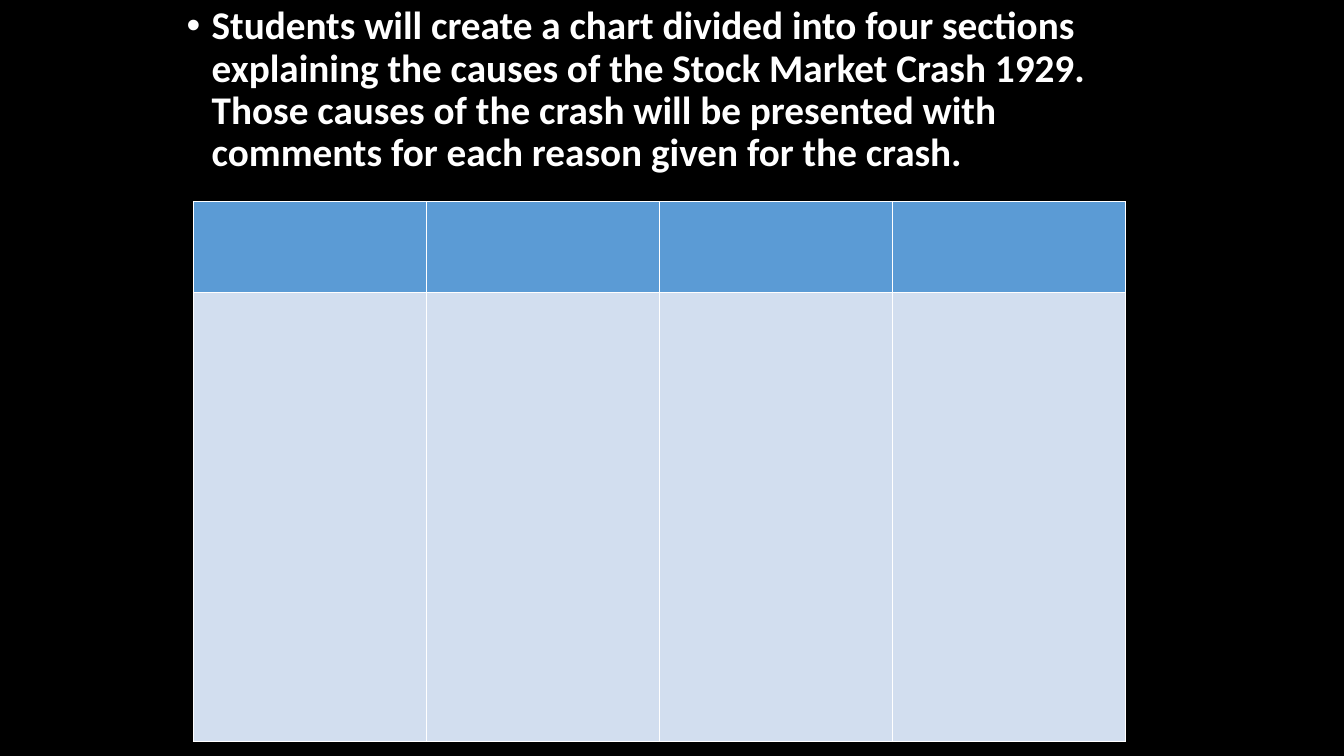
from lxml import etree
from pptx import Presentation
from pptx.dml.color import RGBColor
from pptx.enum.text import MSO_ANCHOR, MSO_AUTO_SIZE, PP_ALIGN
from pptx.oxml.ns import qn
from pptx.util import Inches, Pt

TOP, LEFT = MSO_ANCHOR.TOP, PP_ALIGN.LEFT
NO_AUTOFIT = MSO_AUTO_SIZE.NONE
TITLE_AND_CONTENT = 1

BLACK, WHITE = "000000", "FFFFFF"
HEADER_BLUE, BODY_BLUE = "5B9BD5", "D2DEEF"
COLUMN_COUNT, COLUMN_WIDTH = 4, 2.31
ROWS = [(0.9, HEADER_BLUE), (4.46, BODY_BLUE)]

ASSIGNMENT = (
    "Students will create a chart divided into four sections explaining "
    "the causes of the Stock Market Crash 1929. Those causes of the crash "
    "will be presented with comments for each reason given for the crash."
)


def set_fill(fill, color):
    fill.solid()
    fill.fore_color.rgb = RGBColor.from_string(color)


def set_borders(cell, color, width):
    properties = cell._tc.get_or_add_tcPr()
    # Border lines come before the fill in the cell properties
    for position, side in enumerate(("a:lnL", "a:lnR", "a:lnT", "a:lnB")):
        border = etree.Element(qn(side), w=str(Pt(width)))
        fill = etree.SubElement(border, qn("a:solidFill"))
        etree.SubElement(fill, qn("a:srgbClr"), val=color)
        properties.insert(position, border)


def add_assignment(slide):
    body = slide.placeholders[1]
    body.left, body.top = Inches(1.75), Inches(0.01)
    body.width, body.height = Inches(9.83), Inches(4.78)
    frame = body.text_frame
    frame.text = ASSIGNMENT
    frame.word_wrap = True
    frame.auto_size = NO_AUTOFIT
    frame.vertical_anchor = TOP

    paragraph = frame.paragraphs[0]
    paragraph.alignment = LEFT
    paragraph.line_spacing = 0.9
    paragraph.space_before = Pt(10)
    font = paragraph.runs[0].font
    font.name, font.size, font.bold = "Calibri", Pt(28), True
    font.color.rgb = RGBColor.from_string(WHITE)

    # Hanging bullet
    properties = paragraph._p.get_or_add_pPr()
    properties.set("marL", str(Inches(0.25)))
    properties.set("indent", str(Inches(-0.25)))
    etree.SubElement(properties, qn("a:buFont"), typeface="Arial")
    etree.SubElement(properties, qn("a:buChar"), char="•")


def add_causes_chart(slide):
    height = sum(row_height for row_height, _ in ROWS)
    causes = slide.shapes.add_table(
        len(ROWS), COLUMN_COUNT, Inches(1.92), Inches(2),
        Inches(COLUMN_COUNT * COLUMN_WIDTH), Inches(height),
    ).table
    for column in causes.columns:
        column.width = Inches(COLUMN_WIDTH)
    for row, (row_height, color) in zip(causes.rows, ROWS):
        row.height = Inches(row_height)
        for cell in row.cells:
            set_fill(cell.fill, color)
            set_borders(cell, WHITE, 1)


def main():
    presentation = Presentation()
    presentation.slide_width = Inches(13.33)
    presentation.slide_height = Inches(7.5)
    layout = presentation.slide_layouts[TITLE_AND_CONTENT]
    slide = presentation.slides.add_slide(layout)
    set_fill(slide.background.fill, BLACK)

    # The slide has no title
    title = slide.shapes.title.element
    title.getparent().remove(title)

    add_assignment(slide)
    add_causes_chart(slide)
    presentation.save("out.pptx")


if __name__ == "__main__":
    main()
